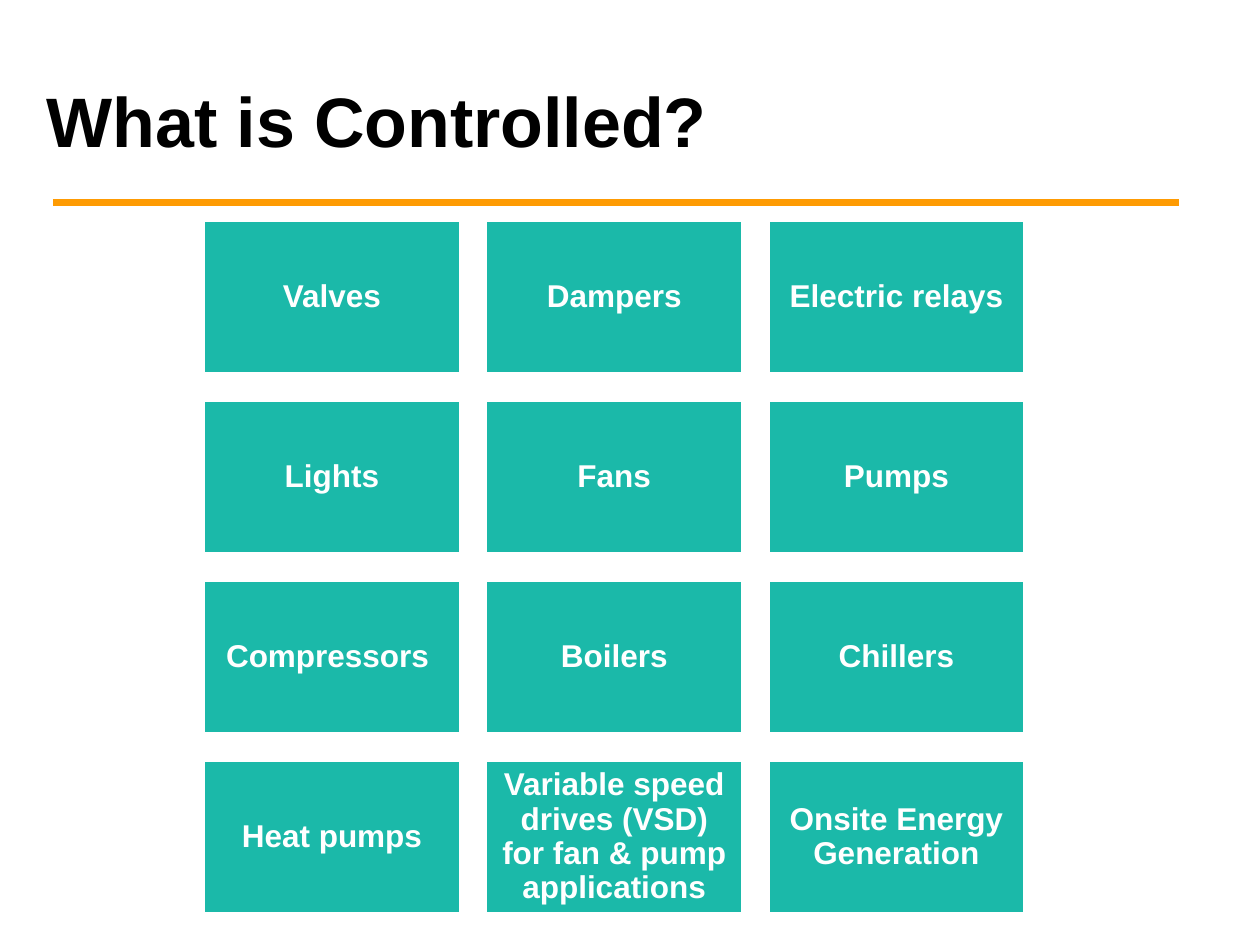
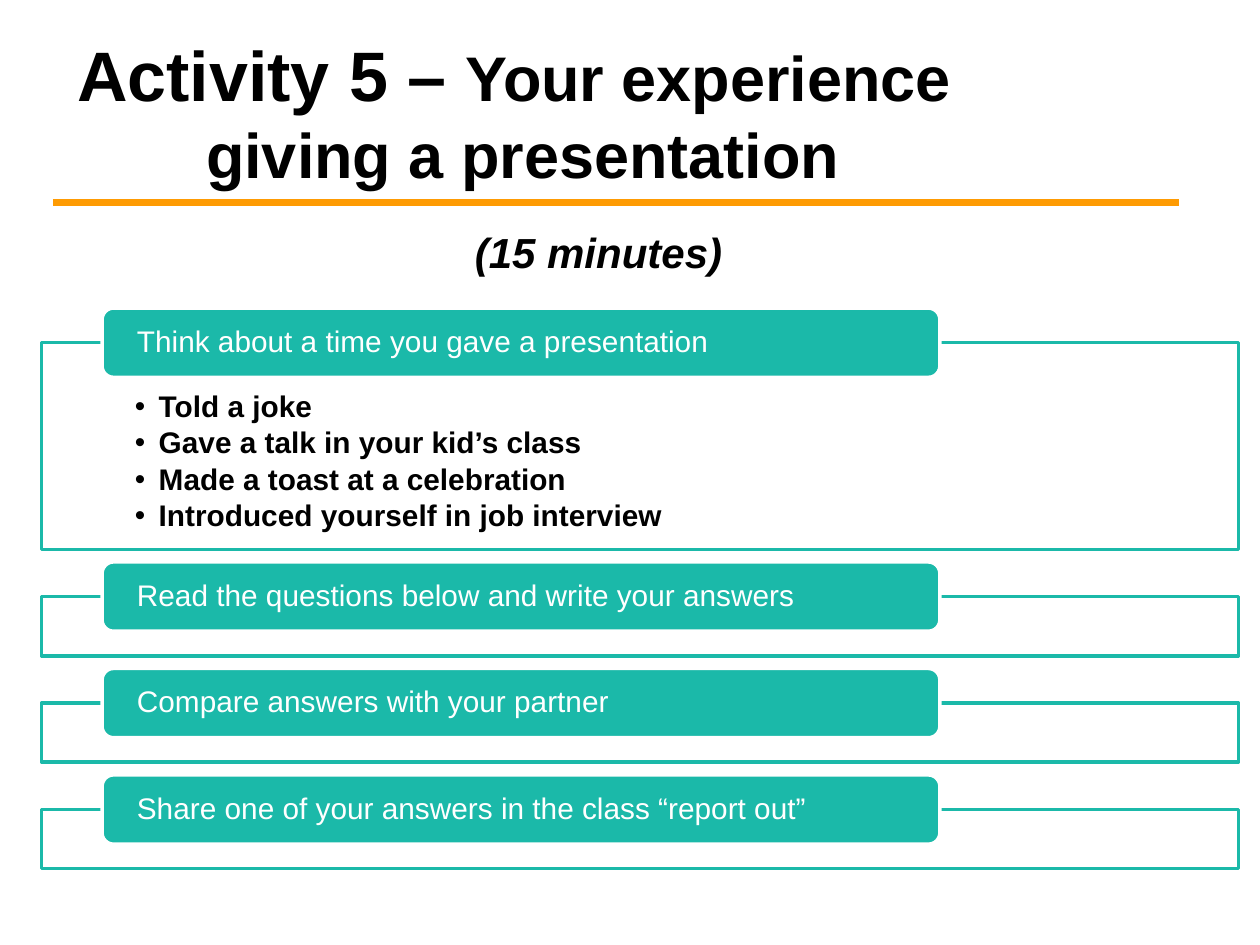
import lxml.etree
import pptx
import pptx.dml.color
import pptx.enum.shapes
import pptx.enum.text
import pptx.oxml.ns
import pptx.util

presentation = pptx.Presentation()
presentation.slide_width = pptx.util.Inches(10)
presentation.slide_height = pptx.util.Inches(7.5)
column = presentation.slide_width / 100
row = presentation.slide_height / 75

TEAL, ORANGE, WHITE, BLACK = "1BB9A9", "FE9B03", "FFFFFF", "000000"
RECTANGLE = pptx.enum.shapes.MSO_SHAPE.RECTANGLE
ROUNDED = pptx.enum.shapes.MSO_SHAPE.ROUNDED_RECTANGLE
TOP = pptx.enum.text.MSO_ANCHOR.TOP
MIDDLE = pptx.enum.text.MSO_ANCHOR.MIDDLE
BOTTOM = pptx.enum.text.MSO_ANCHOR.BOTTOM
LEFT = pptx.enum.text.PP_ALIGN.LEFT
CENTER = pptx.enum.text.PP_ALIGN.CENTER


def color(hex_string):
    return pptx.dml.color.RGBColor.from_string(hex_string)


def add_block(slide, box, paragraphs, style, kind=None):
    left, top, width, height = box
    place = [int(left * column), int(top * row), int(width * column), int(height * row)]
    if kind is None:
        shape = slide.shapes.add_textbox(*place)
    else:
        shape = slide.shapes.add_shape(kind, *place)
        shape.shadow.inherit = False
        shape.fill.solid()
        shape.fill.fore_color.rgb = color(style["fill"])
        shape.line.color.rgb = color(style["line"])
        shape.line.width = pptx.util.Pt(2)
    frame = shape.text_frame
    frame.word_wrap = True
    frame.vertical_anchor = style["anchor"]
    for side, inset in zip(("left", "top", "right", "bottom"), style["insets"]):
        setattr(frame, f"margin_{side}", int(inset * column))
    for index, pieces in enumerate(paragraphs):
        paragraph = frame.add_paragraph() if index else frame.paragraphs[0]
        for name, value in style["paragraph"].items():
            setattr(paragraph, name, value)
        if "bullet" in style:
            properties = paragraph._p.get_or_add_pPr()
            indent = int(style["indent"] * column)
            properties.set("marL", str(indent))
            properties.set("indent", str(-indent))
            bullet_font = lxml.etree.SubElement(properties, pptx.oxml.ns.qn("a:buFont"))
            bullet_font.set("typeface", style["font"]["name"])
            bullet = lxml.etree.SubElement(properties, pptx.oxml.ns.qn("a:buChar"))
            bullet.set("char", style["bullet"])
        for text, size in pieces:
            if text == "\n":
                paragraph.add_line_break()
                continue
            run = paragraph.add_run()
            run.text = text
            run.font.size = pptx.util.Pt(size)
            run.font.color.rgb = color(style["color"])
            for name, value in style["font"].items():
                setattr(run.font, name, value)


bold = {"name": "Arial", "bold": True}
title_style = {"anchor": BOTTOM, "insets": (1, 0.5, 1, 0.5), "color": BLACK,
               "paragraph": {"alignment": LEFT}, "font": bold}
centered_title_style = title_style | {"anchor": MIDDLE, "paragraph": {"alignment": CENTER}}
duration_style = title_style | {"anchor": TOP, "font": bold | {"italic": True}}
cell_style = {"fill": TEAL, "line": WHITE, "anchor": MIDDLE, "insets": (0.9, 0.7, 0.9, 0.7),
              "color": WHITE, "font": bold,
              "paragraph": {"alignment": CENTER, "line_spacing": 0.9}}
tab_style = cell_style | {"insets": (2.5, 0, 2.5, 0), "font": {"name": "Arial", "bold": False},
                          "paragraph": {"alignment": LEFT, "line_spacing": 0.9}}
panel_style = {"fill": WHITE, "line": TEAL, "anchor": TOP, "insets": (7.4, 3.9, 7.4, 1.3),
               "color": BLACK, "bullet": "•", "indent": 1.9, "font": bold,
               "paragraph": {"alignment": LEFT, "line_spacing": 0.9,
                             "space_after": pptx.util.Pt(2.4)}}

titles = [
    ((2.7, 2.5, 72.5, 10.8), [("What is Controlled?", 40)], title_style),
    ((3.9, 2.2, 75.2, 13.2),
     [("Activity 5 – ", 40), ("Your experience ", 36), ("\n", 36), ("giving a presentation", 36)],
     centered_title_style),
]
for box, pieces, style in titles:
    slide = presentation.slides.add_slide(presentation.slide_layouts[6])
    rule = slide.shapes.add_connector(
        pptx.enum.shapes.MSO_CONNECTOR.STRAIGHT,
        int(4.2 * column), int(16.1 * row), int(93.6 * column), int(16.1 * row))
    rule.line.color.rgb = color(ORANGE)
    rule.line.width = pptx.util.Pt(4)
    lxml.etree.SubElement(rule._element.spPr, pptx.oxml.ns.qn("a:effectLst"))
    add_block(slide, box, [pieces], style)
controlled_slide, activity_slide = presentation.slides

controlled_items = [
    "Valves", "Dampers", "Electric relays",
    "Lights", "Fans", "Pumps",
    "Compressors ", "Boilers", "Chillers",
    "Heat pumps", "Variable speed drives (VSD) for fan & pump applications",
    "Onsite Energy Generation",
]
for index, item in enumerate(controlled_items):
    grid_row, grid_column = divmod(index, 3)
    box = (16.15 + 22.4 * grid_column, 17.5 + 14.27 * grid_row, 20.4, 12.2)
    add_block(controlled_slide, box, [[(item, 18)]], cell_style, RECTANGLE)

steps = [
    ("Think about a time you gave a presentation", 16.4,
     ["Told a joke", "Gave a talk in your kid’s class",
      "Made a toast at a celebration", "Introduced yourself in job interview"]),
    ("Read the questions below and write your answers", 4.7, []),
    ("Compare answers with your partner", 4.7, []),
    ("Share one of your answers in the class “report out”", 4.7, []),
]
tab_top, tab_height, step_gap = 24.45, 5.5, 1
for step, panel_height, examples in steps:
    panel_top = tab_top + tab_height / 2
    add_block(activity_slide, (3.3, panel_top, 95, panel_height),
              [[(example, 17)] for example in examples], panel_style, RECTANGLE)
    add_block(activity_slide, (8.1, tab_top, 66.5, tab_height), [[(step, 17)]], tab_style, ROUNDED)
    tab_top = panel_top + panel_height + step_gap

add_block(activity_slide, (36.7, 17.5, 22.5, 9.1), [[("(15 minutes)", 24)]], duration_style)

presentation.save("out.pptx")
